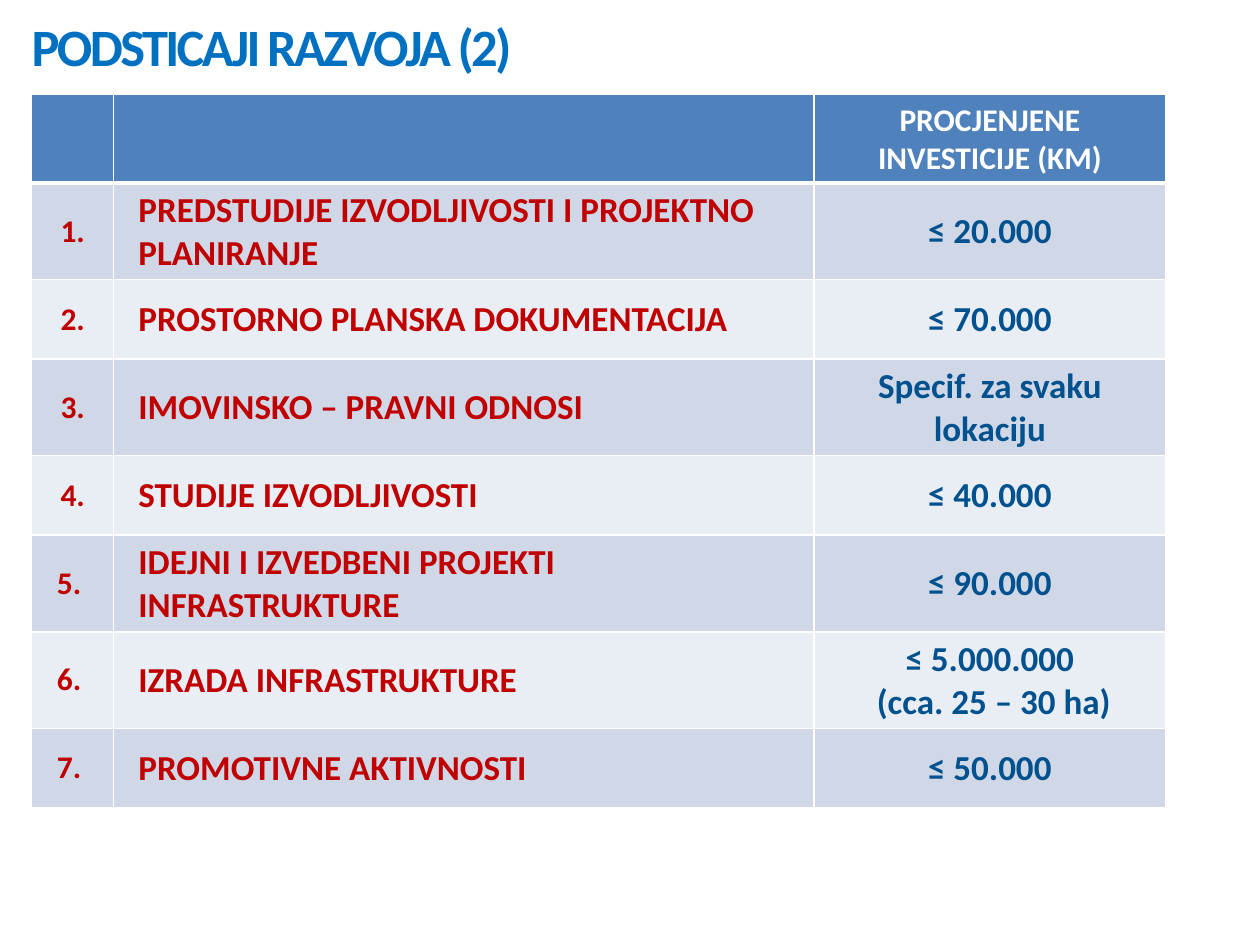
from lxml.etree import SubElement
from pptx import Presentation
from pptx.dml.color import RGBColor
from pptx.enum.text import MSO_ANCHOR, PP_ALIGN
from pptx.oxml.ns import qn
from pptx.util import Cm, Pt

WHITE, BLUE, RED, NAVY = "FFFFFF", "4F81BD", "C00000", "00518E"
BANDS = ["D0D8E8", "E9EDF4"]
COL_WIDTHS = [1.65, 14.12, 7.09]
ROW_HEIGHT = 1.6

HEADER = ["", "", "PROCJENJENE INVESTICIJE (KM)"]
ROWS = [
    ["1.", "PREDSTUDIJE IZVODLJIVOSTI I PROJEKTNO PLANIRANJE", "≤ 20.000"],
    ["2.", "PROSTORNO PLANSKA DOKUMENTACIJA", "≤ 70.000"],
    ["3.", "IMOVINSKO – PRAVNI ODNOSI", "Specif. za svaku lokaciju"],
    ["4.", "STUDIJE IZVODLJIVOSTI", "≤ 40.000"],
    ["5. ", "IDEJNI I IZVEDBENI PROJEKTI INFRASTRUKTURE", "≤ 90.000"],
    ["6. ", "IZRADA INFRASTRUKTURE", "≤ 5.000.000\n (cca. 25 – 30 ha)"],
    ["7. ", "PROMOTIVNE AKTIVNOSTI", "≤ 50.000"],
]

# Format of each column in the body, and of the header
HEADER_FORMAT = dict(size=18, color=WHITE, align=PP_ALIGN.CENTER)
COL_FORMATS = [
    dict(size=18, color=RED, align=PP_ALIGN.CENTER),
    dict(size=20, color=RED, align=PP_ALIGN.LEFT, margin=0.5),
    dict(size=20, color=NAVY, align=PP_ALIGN.CENTER),
]


def rgb(color):
    return RGBColor.from_string(color)


def set_attrs(obj, values):
    for name, value in values.items():
        setattr(obj, name, value)


def write(tf, text, size, color, align=PP_ALIGN.LEFT):
    """Fill a text frame, one paragraph per line of text."""
    tf.text = text
    for p in tf.paragraphs:
        p.alignment = align
        for font in [p.font] + [r.font for r in p.runs]:
            set_attrs(font, dict(name="Calibri", size=Pt(size), bold=True))
            font.color.rgb = rgb(color)


def add_title(s, text):
    tb = s.shapes.add_textbox(Cm(0.64), Cm(0.43), Cm(10.6), Cm(1.14))
    tf = tb.text_frame
    set_attrs(tf, dict(word_wrap=False, vertical_anchor=MSO_ANCHOR.MIDDLE,
                       margin_left=0, margin_right=0,
                       margin_top=0, margin_bottom=0))
    write(tf, text, 30, "0070C0")
    p = tf.paragraphs[0]
    p.line_spacing = 0.9
    p.runs[0].font._element.set("spc", "-150")


def add_borders(cell, top, bottom):
    tcPr = cell._tc.get_or_add_tcPr()
    for side, width in dict(L=1, R=1, T=top, B=bottom).items():
        ln = SubElement(tcPr, qn(f"a:ln{side}"), w=str(Pt(width)))
        fill = SubElement(ln, qn("a:solidFill"))
        SubElement(fill, qn("a:srgbClr"), val=WHITE)


def format_cell(cell, text, fill, size, color, align, margin=0.25):
    cell.fill.solid()
    cell.fill.fore_color.rgb = rgb(fill)
    set_attrs(cell, dict(vertical_anchor=MSO_ANCHOR.MIDDLE,
                         margin_left=Cm(margin), margin_right=Cm(margin)))
    write(cell.text_frame, text, size, color, align)


def add_investment_table(s):
    rows = [HEADER] + ROWS
    table = s.shapes.add_table(
        len(rows), len(COL_WIDTHS), Cm(0.64), Cm(1.91),
        Cm(sum(COL_WIDTHS)), Cm(ROW_HEIGHT * len(rows))).table
    for col, width in zip(table.columns, COL_WIDTHS):
        col.width = Cm(width)
    for i, row in enumerate(rows):
        table.rows[i].height = Cm(ROW_HEIGHT)
        fill = BANDS[(i - 1) % 2] if i else BLUE
        for j, text in enumerate(row):
            cell = table.cell(i, j)
            # A thick line parts the header from the body
            add_borders(cell, top=3 if i == 1 else 1, bottom=1 if i else 3)
            format_cell(cell, text, fill,
                        **(COL_FORMATS[j] if i else HEADER_FORMAT))


def main():
    prs = Presentation()
    set_attrs(prs, dict(slide_width=Cm(25.4), slide_height=Cm(19.05)))
    s = prs.slides.add_slide(prs.slide_layouts[6])
    add_title(s, "PODSTICAJI RAZVOJA (2)")
    add_investment_table(s)
    prs.save("out.pptx")


if __name__ == "__main__":
    main()
